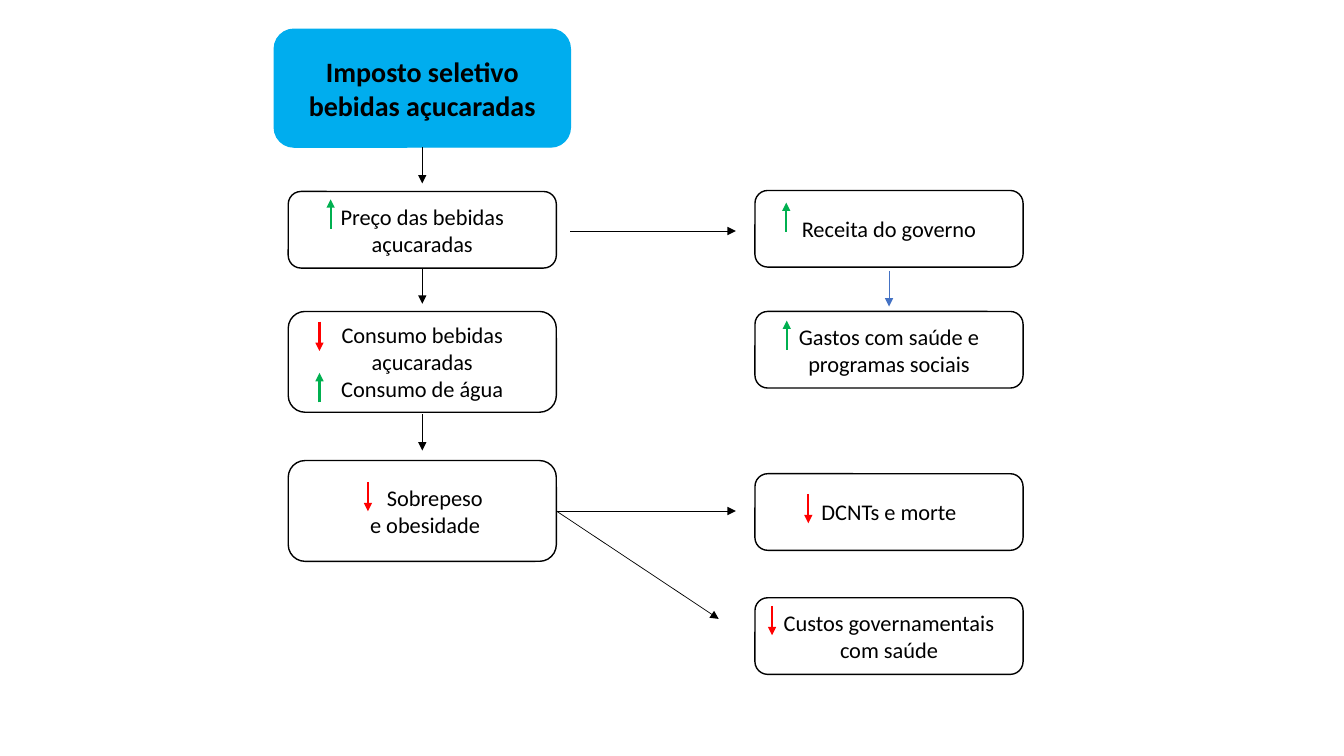
from lxml import etree
from pptx import Presentation
from pptx.dml.color import RGBColor
from pptx.enum.shapes import MSO_CONNECTOR, MSO_SHAPE
from pptx.enum.text import MSO_ANCHOR, PP_ALIGN
from pptx.oxml.ns import qn
from pptx.util import Pt

ROUND = MSO_SHAPE.ROUNDED_RECTANGLE
STRAIGHT = MSO_CONNECTOR.STRAIGHT
MIDDLE = MSO_ANCHOR.MIDDLE
CENTER = PP_ALIGN.CENTER
BOTTOM, RIGHT = 2, 3

BLACK = RGBColor(0, 0, 0)
WHITE = RGBColor(255, 255, 255)
CYAN = RGBColor(0x00, 0xAD, 0xEE)
BLUE = RGBColor(0x44, 0x72, 0xC4)
GREEN = RGBColor(0x00, 0xB0, 0x50)
RED = RGBColor(255, 0, 0)

LEFT_COL, RIGHT_COL, BOX_W = 205.9, 539.3, 191.5
LEFT_MID = LEFT_COL + BOX_W / 2
RIGHT_MID = RIGHT_COL + BOX_W / 2
LOW, HIGH = 54.7, 72
MARK = 21

deck = Presentation()
deck.slide_width, deck.slide_height = Pt(960), Pt(540)
slide = deck.slides.add_slide(deck.slide_layouts[6])


def add_box(x, y, w, h, lines, fill=WHITE, edge=BLACK, size=16, bold=False):
    """Draw a rounded box; lines holds pairs of text and left margin."""
    box = slide.shapes.add_shape(ROUND, Pt(x), Pt(y), Pt(w), Pt(h))
    box.shadow.inherit = False
    box.fill.solid()
    box.fill.fore_color.rgb = fill
    box.line.color.rgb = edge
    box.line.width = Pt(1)
    frame = box.text_frame
    frame.word_wrap = True
    frame.vertical_anchor = MIDDLE
    for i, (text, margin) in enumerate(lines):
        para = frame.add_paragraph() if i else frame.paragraphs[0]
        para.alignment = CENTER
        if margin:
            para._p.get_or_add_pPr().set("marL", str(Pt(margin)))
        run = para.add_run()
        run.text = text
        font = run.font
        font.name, font.size, font.bold = "Calibri", Pt(size), bold
        font.color.rgb = BLACK
    return box


def add_arrow(x1, y1, x2, y2, color=BLACK, width=0.5):
    arrow = slide.shapes.add_connector(STRAIGHT, Pt(x1), Pt(y1), Pt(x2), Pt(y2))
    arrow.line.color.rgb = color
    arrow.line.width = Pt(width)
    head = etree.SubElement(arrow.line._get_or_add_ln(), qn("a:tailEnd"))
    head.set("type", "triangle")
    etree.SubElement(arrow._element.spPr, qn("a:effectLst"))
    return arrow


# Boxes
tax = add_box(195.9, 20.9, 211.5, 84.2, [("Imposto seletivo bebidas açucaradas", 0)],
              CYAN, CYAN, 20, True)
price = add_box(LEFT_COL, 136.8, BOX_W, LOW, [("Preço das bebidas açucaradas", 0)])
add_box(LEFT_COL, 222.5, BOX_W, HIGH,
        [("Consumo bebidas açucaradas", 0), ("Consumo de água", 0)])
weight = add_box(LEFT_COL, 329, BOX_W, HIGH, [("Sobrepeso", 18), ("e obesidade", 4)])

for top, text in [
    (136.1, "Receita do governo"),
    (222.5, "Gastos com saúde e programas sociais"),
    (338.4, "DCNTs e morte"),
    (427, "Custos governamentais com saúde"),
]:
    add_box(RIGHT_COL, top, BOX_W, LOW, [(text, 0)])

# Flow arrows, joined to a box where they start on its side
for start, side, x1, y1, x2, y2, color in [
    (tax, BOTTOM, LEFT_MID, 105.1, LEFT_MID, 131, BLACK),
    (price, BOTTOM, LEFT_MID, 191.5, LEFT_MID, 217, BLACK),
    (None, None, LEFT_MID, 296, LEFT_MID, 321.8, BLACK),
    (None, None, 407.5, 165, 525.6, 165, BLACK),
    (None, None, RIGHT_MID, 193.5, RIGHT_MID, 219, BLUE),
    (weight, RIGHT, 397.4, 365, 525.6, 365, BLACK),
    (weight, RIGHT, 397.4, 365, 513.4, 442.1, BLACK),
]:
    flow = add_arrow(x1, y1, x2, y2, color)
    if start:
        flow.begin_connect(start, side)

# Rise and fall marks
for x, top in [(236.2, 142.4), (561.6, 144.7), (562, 229), (228.2, 266.4)]:
    add_arrow(x, top + MARK, x, top, GREEN, 1.5)
for x, top in [(228.2, 229.7), (262.8, 344.2), (577.4, 352.8), (551.5, 432.7)]:
    add_arrow(x, top, x, top + MARK, RED, 1.5)

deck.save("out.pptx")
